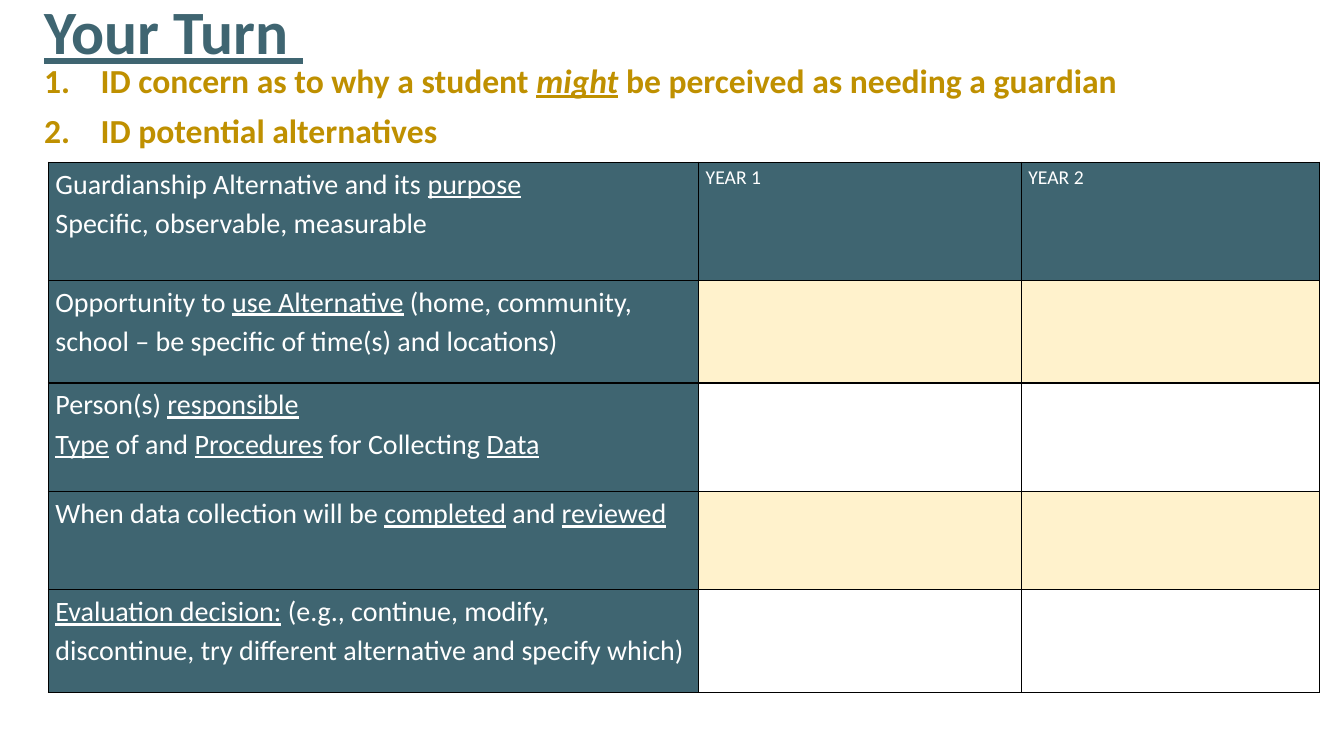
import dataclasses

import pptx
import pptx.dml.color
import pptx.enum.text
import pptx.oxml
import pptx.oxml.ns
import pptx.util
from pptx.util import Inches

COLORS = {
    "teal": "3F6571",
    "gold": "BF9000",
    "cream": "FFF2CC",
    "white": "FFFFFF",
    "black": "000000",
}
FONT = "Calibri"
TITLE_ONLY_LAYOUT = 5
COLUMN_WIDTHS = (6.45, 3.2, 2.96)
BORDER_SIDES = ("L", "R", "T", "B")


@dataclasses.dataclass(frozen=True)
class TextStyle:
    size: float
    color: str
    bold: bool = False
    italic_marked: bool = False


@dataclasses.dataclass(frozen=True)
class PlanRow:
    height: float
    prompt: tuple[str, ...]
    fill: str
    years: tuple[str, ...] = ("", "")


TITLE_STYLE = TextStyle(44, "teal", bold=True)
STEP_STYLE = TextStyle(24, "gold", bold=True, italic_marked=True)
PROMPT_STYLE = TextStyle(20, "white")
YEAR_STYLE = TextStyle(14, "white")

# Underscores enclose underlined words.
STEPS = (
    "ID concern as to why a student _might_ be perceived as needing a guardian",
    "ID potential alternatives",
)
PLAN_ROWS = (
    PlanRow(1.17, ("Guardianship Alternative and its _purpose_",
                   "Specific, observable, measurable"), "teal", ("YEAR 1", "YEAR 2")),
    PlanRow(1.02, ("Opportunity to _use Alternative_ (home, community, school – "
                   "be specific of time(s) and locations)",), "cream"),
    PlanRow(1.08, ("Person(s) _responsible_",
                   "_Type_ of and _Procedures_ for Collecting _Data_"), "white"),
    PlanRow(0.97, ("When data collection will be _completed_ and _reviewed_",), "cream"),
    PlanRow(1.02, ("_Evaluation decision:_ (e.g., continue, modify, discontinue, "
                   "try different alternative and specify which)",), "white"),
)


def set_attributes(target, values: dict) -> None:
    for name, value in values.items():
        setattr(target, name, value)


def rgb(color: str) -> pptx.dml.color.RGBColor:
    return pptx.dml.color.RGBColor.from_string(COLORS[color])


def write_paragraphs(text_frame, lines: tuple[str, ...], style: TextStyle,
                     paragraph_format: dict) -> None:
    """Write one paragraph per line, underlining the words between underscores."""
    for line_index, line in enumerate(lines):
        paragraph = text_frame.add_paragraph() if line_index else text_frame.paragraphs[0]
        set_attributes(paragraph, paragraph_format)
        for part_index, part in enumerate(line.split("_")):
            if not part:
                continue
            marked = part_index % 2 == 1
            run = paragraph.add_run()
            run.text = part
            set_attributes(run.font, {
                "name": FONT,
                "size": pptx.util.Pt(style.size),
                "bold": style.bold,
                "underline": marked,
                "italic": marked and style.italic_marked,
            })
            run.font.color.rgb = rgb(style.color)


def add_title(slide) -> None:
    title = slide.shapes.title
    set_attributes(title, {"left": Inches(0.34), "top": Inches(-0.28),
                           "width": Inches(10.83), "height": Inches(1.25)})
    set_attributes(title.text_frame, {
        "word_wrap": True,
        "vertical_anchor": pptx.enum.text.MSO_ANCHOR.MIDDLE,
    })
    write_paragraphs(title.text_frame, ("_Your Turn _",), TITLE_STYLE, {
        "alignment": pptx.enum.text.PP_ALIGN.LEFT, "line_spacing": 0.9})


def add_steps(slide) -> None:
    box = slide.shapes.add_textbox(Inches(0.34), Inches(0.59), Inches(12.76), Inches(1.47))
    box.text_frame.word_wrap = True
    write_paragraphs(box.text_frame, STEPS, STEP_STYLE, {
        "line_spacing": 0.9, "space_before": pptx.util.Pt(10)})
    for paragraph in box.text_frame.paragraphs:
        properties = paragraph._p.get_or_add_pPr()
        properties.set("marL", str(Inches(0.56)))
        properties.set("indent", str(Inches(-0.56)))
        properties.append(pptx.oxml.parse_xml(
            f'<a:buAutoNum {pptx.oxml.ns.nsdecls("a")} type="arabicPeriod"/>'))


def format_cell(cell, fill: str) -> None:
    set_attributes(cell, {"margin_left": Inches(0.07), "margin_right": Inches(0.07),
                          "margin_top": 0, "margin_bottom": 0})
    properties = cell._tc.get_or_add_tcPr()
    for side in BORDER_SIDES:
        properties.append(pptx.oxml.parse_xml(
            f'<a:ln{side} {pptx.oxml.ns.nsdecls("a")} w="{pptx.util.Pt(1)}">'
            f'<a:solidFill><a:srgbClr val="{COLORS["black"]}"/></a:solidFill></a:ln{side}>'))
    cell.fill.solid()
    cell.fill.fore_color.rgb = rgb(fill)


def add_plan_table(slide) -> None:
    table = slide.shapes.add_table(
        len(PLAN_ROWS), len(COLUMN_WIDTHS), Inches(0.48), Inches(1.61),
        Inches(sum(COLUMN_WIDTHS)), Inches(sum(row.height for row in PLAN_ROWS))).table
    set_attributes(table, {"first_row": False, "horz_banding": False})
    for column, width in zip(table.columns, COLUMN_WIDTHS):
        column.width = Inches(width)
    for row_index, row in enumerate(PLAN_ROWS):
        table.rows[row_index].height = Inches(row.height)
        prompt_cell, *year_cells = table.rows[row_index].cells
        format_cell(prompt_cell, "teal")
        write_paragraphs(prompt_cell.text_frame, row.prompt, PROMPT_STYLE,
                         {"line_spacing": 1.15})
        for cell, year in zip(year_cells, row.years):
            format_cell(cell, row.fill)
            write_paragraphs(cell.text_frame, (year,), YEAR_STYLE, {"line_spacing": 1.15})


def main() -> None:
    presentation = pptx.Presentation()
    set_attributes(presentation, {"slide_width": Inches(13.33), "slide_height": Inches(7.5)})
    slide = presentation.slides.add_slide(presentation.slide_layouts[TITLE_ONLY_LAYOUT])
    add_title(slide)
    add_steps(slide)
    add_plan_table(slide)
    presentation.save("out.pptx")


if __name__ == "__main__":
    main()
